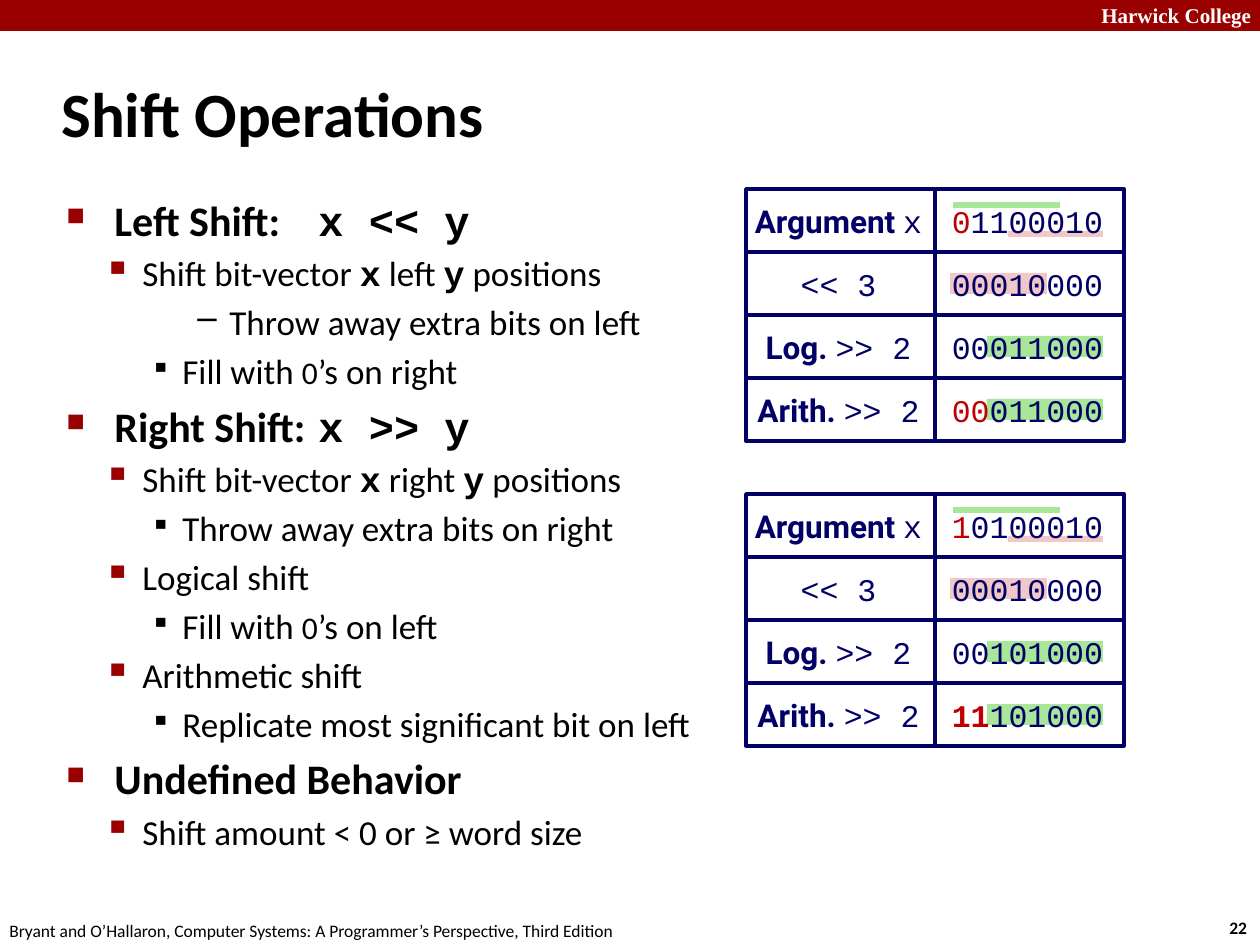
from dataclasses import dataclass
from typing import NamedTuple

import pptx
import pptx.dml.color
import pptx.enum.shapes
import pptx.enum.text
import pptx.oxml
import pptx.oxml.ns
import pptx.util

RGBColor = pptx.dml.color.RGBColor
RED = RGBColor(0x99, 0x00, 0x00)
SIGN_RED = RGBColor(0xC0, 0x00, 0x00)
NAVY = RGBColor(0x00, 0x00, 0x66)
GREEN = RGBColor(0xA8, 0xE7, 0x99)
PINK = RGBColor(0xF1, 0xC7, 0xC7)
BLACK = RGBColor(0x00, 0x00, 0x00)
WHITE = RGBColor(0xFF, 0xFF, 0xFF)

SANS, MONO, LABEL, SERIF = "Calibri", "Courier New", "Roboto", "Times New Roman"
PX_PER_INCH = 126
CELL_W, CELL_H = 189, 63
TABLE_X = 746
BITS_X = TABLE_X + CELL_W


class Level(NamedTuple):
    margin: int
    hanging: int
    bullet: str
    bullet_pct: int
    bullet_color: RGBColor
    size: int
    bold: bool


LEVELS = [
    Level(48, 48, "■", 60, RED, 24, True),
    Level(76, 39, "▪", 110, RED, 20, False),
    Level(116, 32, "▪", 80, BLACK, 20, False),
    Level(163, 32, "–", 100, BLACK, 20, False),
]


class Code(NamedTuple):
    text: str


class Digit(NamedTuple):
    text: str


OUTLINE = [
    (0, ["Left Shift: \t", Code("x << y")]),
    (1, ["Shift bit-vector ", Code("x"), " left ", Code("y"), " positions"]),
    (3, ["Throw away extra bits on left"]),
    (2, ["Fill with ", Digit("0"), "’s on right"]),
    (0, ["Right Shift: \t", Code("x >> y")]),
    (1, ["Shift bit-vector ", Code("x"), " right ", Code("y"), " positions"]),
    (2, ["Throw away extra bits on right"]),
    (1, ["Logical shift"]),
    (2, ["Fill with ", Digit("0"), "’s on left"]),
    (1, ["Arithmetic shift"]),
    (2, ["Replicate most significant bit on left"]),
    (0, ["Undefined Behavior"]),
    (1, ["Shift amount < 0 or ≥ word size"]),
]


@dataclass
class ShiftRow:
    label: str
    code: str
    red_bits: str
    bits: str
    red_bold: bool = False


@dataclass
class ShiftTable:
    top: int
    rows: list[ShiftRow]


TABLES = [
    ShiftTable(189, [
        ShiftRow("Argument ", "x", "0", "1100010"),
        ShiftRow("", "<< 3", "", "00010000"),
        ShiftRow("Log. ", ">> 2", "", "00011000"),
        ShiftRow("Arith. ", ">> 2", "00", "011000"),
    ]),
    ShiftTable(494, [
        ShiftRow("Argument ", "x", "1", "0100010"),
        ShiftRow("", "<< 3", "", "00010000"),
        ShiftRow("Log. ", ">> 2", "", "00101000"),
        ShiftRow("Arith. ", ">> 2", "11", "101000", red_bold=True),
    ]),
]


def px(n: int) -> int:
    return pptx.util.Emu(round(n * 914400 / PX_PER_INCH))


def add_run(p, text: str, *, size: int = 18, font: str = SANS,
            color: RGBColor = BLACK, bold: bool = False) -> None:
    if not text:
        return
    r = p.add_run()
    r.text = text
    r.font.size = pptx.util.Pt(size)
    r.font.name = font
    r.font.bold = bold
    r.font.color.rgb = color


def add_box(s, x: int, y: int, w: int, h: int, wrap: bool = True):
    tf = s.shapes.add_textbox(px(x), px(y), px(w), px(h)).text_frame
    tf.word_wrap = wrap
    return tf


def add_rect(s, x: int, y: int, w: int, h: int, *,
             fill: RGBColor | None = None, line: RGBColor | None = None):
    sp = s.shapes.add_shape(pptx.enum.shapes.MSO_SHAPE.RECTANGLE,
                            px(x), px(y), px(w), px(h))
    sp.shadow.inherit = False
    if fill is None:
        sp.fill.background()
    else:
        sp.fill.solid()
        sp.fill.fore_color.rgb = fill
    if line is None:
        sp.line.fill.background()
    else:
        sp.line.color.rgb = line
        sp.line.width = pptx.util.Pt(2)
    return sp


def add_bar(s, x1: int, x2: int, y: int, color: RGBColor) -> None:
    """Mark a group of bits with a thick horizontal line."""
    line = s.shapes.add_connector(pptx.enum.shapes.MSO_CONNECTOR.STRAIGHT,
                                  px(x1), px(y), px(x2), px(y))
    line.line.color.rgb = color
    line.line.width = pptx.util.Pt(3)
    pptx.oxml.ns.qn("a:effectLst")
    line._element.spPr.append(pptx.oxml.parse_xml(
        f'<a:effectLst {pptx.oxml.ns.nsdecls("a")}/>'))


def set_bullet(p, level: Level) -> None:
    pPr = p._p.get_or_add_pPr()
    pPr.set("marL", str(px(level.margin)))
    pPr.set("indent", str(-px(level.hanging)))
    ns = pptx.oxml.ns.nsdecls("a")
    for xml in (
        f'<a:spcBef {ns}><a:spcPct val="20000"/></a:spcBef>',
        f'<a:buClr {ns}><a:srgbClr val="{level.bullet_color}"/></a:buClr>',
        f'<a:buSzPct {ns} val="{level.bullet_pct * 1000}"/>',
        f'<a:buChar {ns} char="{level.bullet}"/>',
    ):
        pPr.append(pptx.oxml.parse_xml(xml))


def add_outline(s) -> None:
    tf = add_box(s, 54, 188, 1088, 685)
    for i, (depth, parts) in enumerate(OUTLINE):
        p = tf.add_paragraph() if i else tf.paragraphs[0]
        p.level = depth
        level = LEVELS[depth]
        set_bullet(p, level)
        for part in parts:
            if isinstance(part, Code):
                add_run(p, part.text, size=level.size, font=MONO, bold=True)
            elif isinstance(part, Digit):
                add_run(p, part.text, size=18)
            else:
                add_run(p, part, size=level.size, bold=level.bold)


def add_cell(s, x: int, y: int):
    """Draw one outlined cell and return its paragraph."""
    tf = add_rect(s, x, y, CELL_W, CELL_H, line=NAVY).text_frame
    tf.word_wrap = False
    tf.vertical_anchor = pptx.enum.text.MSO_ANCHOR.MIDDLE
    tf.margin_left = tf.margin_top = tf.margin_bottom = px(8)
    tf.margin_right = px(12)
    p = tf.paragraphs[0]
    p.alignment = pptx.enum.text.PP_ALIGN.CENTER
    return p


def add_shift_table(s, table: ShiftTable) -> None:
    add_rect(s, 950, table.top + CELL_H + 21, 97, 21, fill=PINK)
    for row in (2, 3):
        add_rect(s, 987, table.top + row * CELL_H + 21, 116, 21, fill=GREEN)
    add_bar(s, 1103, 1008, table.top + 45, PINK)
    add_bar(s, 1060, 953, table.top + 16, GREEN)
    for i, row in enumerate(table.rows):
        y = table.top + i * CELL_H
        p = add_cell(s, TABLE_X, y)
        add_run(p, row.label, font=LABEL, color=NAVY, bold=True)
        add_run(p, row.code, font=MONO, color=NAVY)
        p = add_cell(s, BITS_X, y)
        add_run(p, row.red_bits, font=MONO, color=SIGN_RED, bold=row.red_bold)
        add_run(p, row.bits, font=MONO, color=NAVY)


def main() -> None:
    prs = pptx.Presentation()
    prs.slide_width, prs.slide_height = px(1260), px(945)
    s = prs.slides.add_slide(prs.slide_layouts[6])

    add_rect(s, 0, 0, 1260, 31, fill=RED)
    add_run(add_box(s, 1089, -4, 180, 38).paragraphs[0], "Harwick College",
            size=12, font=SERIF, color=WHITE, bold=True)
    add_run(add_box(s, 1217, 911, 47, 34, wrap=False).paragraphs[0], "22", size=10, bold=True)
    add_run(add_box(s, -3, 914, 640, 34, wrap=False).paragraphs[0],
            "Bryant and O’Hallaron, Computer Systems: A Programmer’s Perspective, Third Edition",
            size=10)

    title = add_box(s, 49, 60, 1046, 105)
    title.vertical_anchor = pptx.enum.text.MSO_ANCHOR.MIDDLE
    add_run(title.paragraphs[0], "Shift Operations", size=36, bold=True)
    add_outline(s)
    for table in TABLES:
        add_shift_table(s, table)
    prs.save("out.pptx")


if __name__ == "__main__":
    main()
